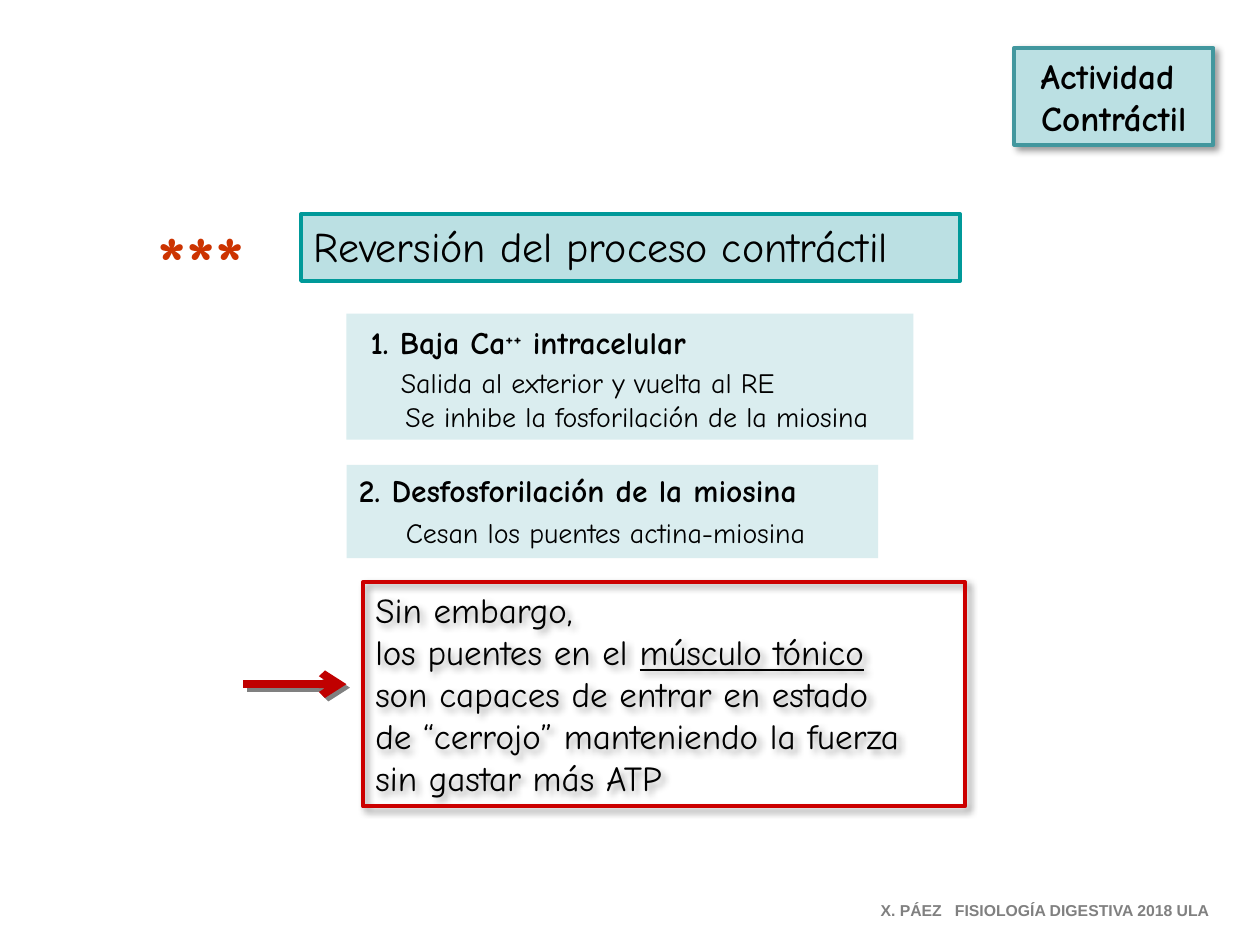
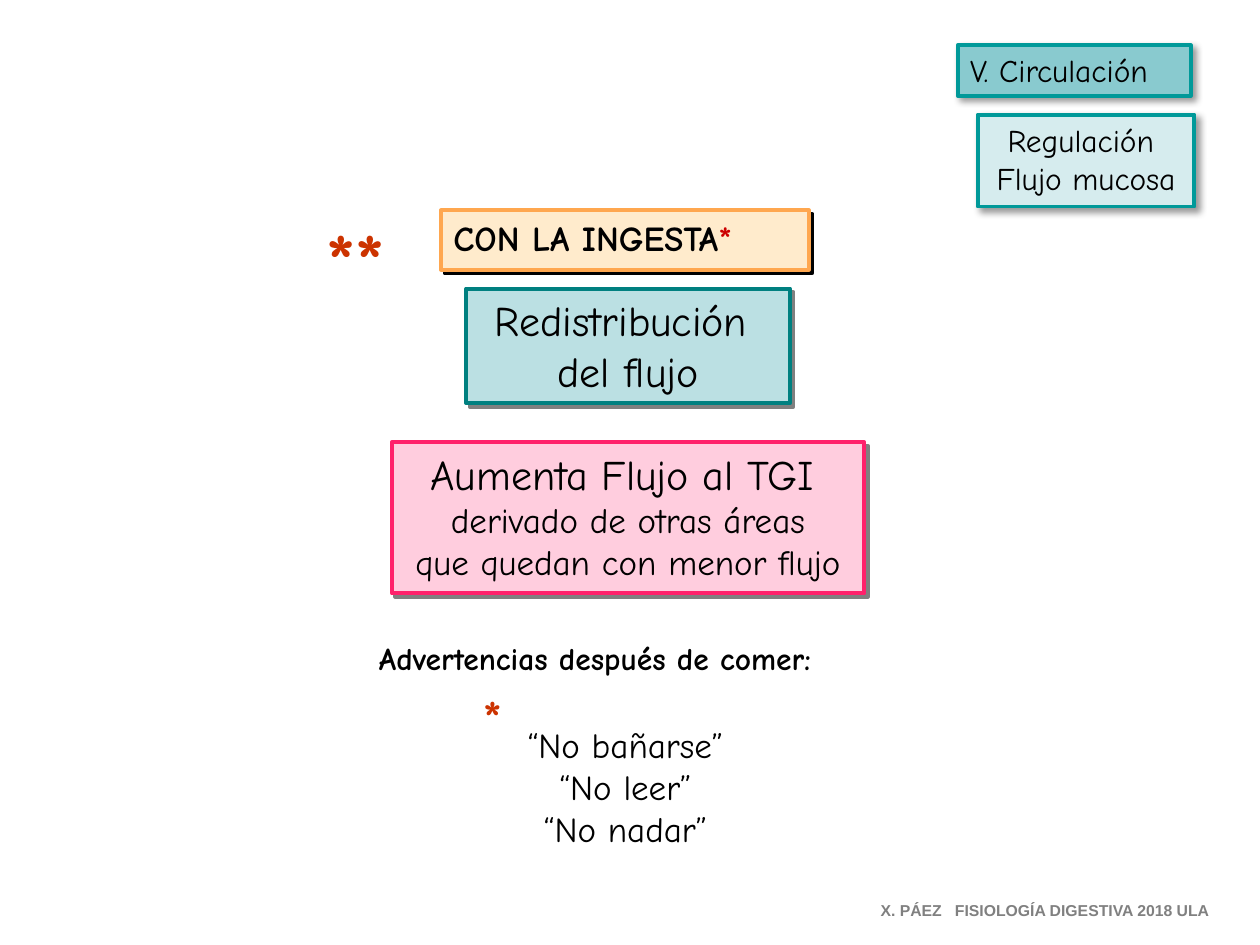
"""Build two digestive physiology slides: contractile reversal and mucosal blood flow."""
from dataclasses import dataclass, field
from typing import Optional

from lxml.etree import SubElement
from pptx import Presentation
from pptx.dml.color import RGBColor
from pptx.enum.shapes import MSO_CONNECTOR, MSO_SHAPE
from pptx.enum.text import MSO_ANCHOR, MSO_AUTO_SIZE, PP_ALIGN
from pptx.oxml import parse_xml
from pptx.oxml.ns import nsdecls, qn
from pptx.util import Inches, Pt

COLUMN = ROW = Inches(0.1)
COLUMNS, ROWS = 100, 75

BLACK = RGBColor(0x00, 0x00, 0x00)
GRAY = RGBColor(0x80, 0x80, 0x80)
RED = RGBColor(0xCC, 0x00, 0x00)
ARROW_RED = RGBColor(0xC0, 0x00, 0x00)
STAR_RED = RGBColor(0xCC, 0x33, 0x00)
TEAL = RGBColor(0x00, 0x99, 0x99)
DARK_TEAL = RGBColor(0x00, 0x80, 0x80)
DULL_TEAL = RGBColor(0x42, 0x97, 0x9E)
AQUA = RGBColor(0xBB, 0xE0, 0xE3)
DEEP_AQUA = RGBColor(0x89, 0xCA, 0xCF)
PALE_AQUA = RGBColor(0xDA, 0xED, 0xEF)
ICE = RGBColor(0xD6, 0xEC, 0xEE)
CREAM = RGBColor(0xFF, 0xEB, 0xCC)
ORANGE = RGBColor(0xFF, 0xA7, 0x4F)
PINK = RGBColor(0xFF, 0xCD, 0xDE)
MAGENTA = RGBColor(0xFF, 0x21, 0x6B)

BODY_FONT = "Comic Neue"
FOOTER_FONT = "Arial"
LEFT, CENTER = PP_ALIGN.LEFT, PP_ALIGN.CENTER


@dataclass(frozen=True)
class Shadow:
    """A drop shadow towards the lower right, in points and percent."""
    color: RGBColor
    opacity: int = 100
    blur: float = 0
    distance: float = 2.8


SOFT = Shadow(BLACK, 40, 4, 3)
HARD_GRAY = Shadow(GRAY)
HARD_BLACK = Shadow(BLACK)


@dataclass(frozen=True)
class Words:
    """A stretch of text with one format."""
    text: str
    style: dict = field(default_factory=dict)


@dataclass(frozen=True)
class Line:
    """A paragraph: its words, and its indent in columns."""
    words: list[Words]
    indent: float = 0
    tab: Optional[float] = None


@dataclass(frozen=True)
class Panel:
    """A text block placed by column, row, columns wide and rows high."""
    place: tuple[float, float, float, float]
    lines: list[Line]
    fill: Optional[RGBColor] = None
    border: Optional[RGBColor] = None
    shadow: Optional[Shadow] = None
    align: PP_ALIGN = LEFT
    wrap: bool = False


def line(text: str, indent: float = 0, tab: Optional[float] = None, **style) -> Line:
    """Make a paragraph with a single format."""
    return Line([Words(text, style)], indent, tab)


def effect_list(shadow: Optional[Shadow]):
    """Make the effect list for a shadow, empty when there is none."""
    effects = parse_xml(f"<a:effectLst {nsdecls('a')}/>")
    if shadow:
        outer = SubElement(effects, qn("a:outerShdw"), blurRad=str(Pt(shadow.blur)),
                           dist=str(Pt(shadow.distance)), dir="2700000",
                           algn="tl", rotWithShape="0")
        tint = SubElement(outer, qn("a:srgbClr"), val=str(shadow.color))
        SubElement(tint, qn("a:alpha"), val=str(shadow.opacity * 1000))
    return effects


def write(paragraph, text: str, *, size: float = 20, color: RGBColor = BLACK,
          bold: bool = False, underline: bool = False, raised: bool = False,
          font: str = BODY_FONT, shadow: Optional[Shadow] = None) -> None:
    """Add formatted text to a paragraph."""
    run = paragraph.add_run()
    run.text = text
    run.font.size, run.font.bold, run.font.underline = Pt(size), bold, underline
    run.font.color.rgb = color
    run.font.name = font
    properties = run.font._element
    if raised:
        properties.set("baseline", "30000")
    if shadow:
        properties.find(qn("a:solidFill")).addnext(effect_list(shadow))


def draw_panel(slide, panel: Panel) -> None:
    """Draw a panel, as a rectangle when it has a fill or a border."""
    left, top, width, height = panel.place
    box = (int(left * COLUMN), int(top * ROW), int(width * COLUMN), int(height * ROW))
    if panel.fill or panel.border:
        block = slide.shapes.add_shape(MSO_SHAPE.RECTANGLE, *box)
        block.shadow.inherit = False
        if panel.fill:
            block.fill.solid()
            block.fill.fore_color.rgb = panel.fill
        else:
            block.fill.background()
        if panel.border:
            block.line.color.rgb = panel.border
            block.line.width = Pt(2.25)
        else:
            block.line.fill.background()
        if panel.shadow:
            effects = block._element.spPr.find(qn("a:effectLst"))
            effects.getparent().replace(effects, effect_list(panel.shadow))
    else:
        block = slide.shapes.add_textbox(*box)
    frame = block.text_frame
    frame.word_wrap = panel.wrap
    frame.auto_size = MSO_AUTO_SIZE.SHAPE_TO_FIT_TEXT
    frame.vertical_anchor = MSO_ANCHOR.TOP
    for index, entry in enumerate(panel.lines):
        paragraph = frame.add_paragraph() if index else frame.paragraphs[0]
        paragraph.alignment = panel.align
        properties = paragraph._p.get_or_add_pPr()
        if entry.indent:
            properties.set("marL", str(int(entry.indent * COLUMN)))
            properties.set("indent", "0")
        if entry.tab:
            stops = SubElement(properties, qn("a:tabLst"))
            SubElement(stops, qn("a:tab"), pos=str(int(entry.tab * COLUMN)), algn="l")
        for words in entry.words:
            write(paragraph, words.text, **words.style)


def draw_arrow(slide, start: float, end: float, row: float) -> None:
    """Draw a thick horizontal arrow between two columns."""
    y = int(row * ROW)
    arrow = slide.shapes.add_connector(MSO_CONNECTOR.STRAIGHT, int(start * COLUMN), y,
                                       int(end * COLUMN), y)
    arrow.line.color.rgb = ARROW_RED
    arrow.line.width = Pt(4.5)
    SubElement(arrow.line._get_or_add_ln(), qn("a:tailEnd"), type="arrow")
    arrow._element.spPr.append(effect_list(HARD_GRAY))


def stars(count: int, place: tuple[float, float, float, float], size: int = 44) -> Panel:
    """Make a mark of red shadowed asterisks."""
    return Panel(place, [line("*" * count, size=size, color=STAR_RED, bold=True,
                              shadow=HARD_BLACK)])


HEADING = {"size": 18, "bold": True}
DETAIL = {"size": 16}

FOOTER = Panel((68.9, 71, 29.2, 2.5),
               [line("X. PÁEZ\tFISIOLOGÍA DIGESTIVA 2018 ULA", tab=5.9, size=9,
                     color=GRAY, bold=True, font=FOOTER_FONT)])

REVERSAL = [
    Panel((23.9, 17, 52.3, 5.3), [line("Reversión del proceso contráctil", size=24)],
          AQUA, TEAL),
    Panel((27.5, 24.9, 45, 10), [
        Line([Words(" "), Words("1. Baja Ca", HEADING),
              Words("++", {**HEADING, "raised": True}), Words(" intracelular", HEADING)]),
        Line([Words(" ", {"size": 18}), Words("Salida al exterior y vuelta al RE", DETAIL)],
             indent=2.5),
        line("Se inhibe la fosforilación de la miosina", indent=3.7, **DETAIL),
    ], PALE_AQUA),
    Panel((27.5, 36.9, 42.2, 7.4), [
        line("2. Desfosforilación de la miosina", **HEADING),
        Line([Words(" "), Words("Cesan los puentes actina-miosina", DETAIL)], indent=2.8),
    ], PALE_AQUA),
    Panel((28.8, 46.2, 47.8, 17.8), [
        line("Sin embargo,"),
        Line([Words("los puentes en el "), Words("músculo tónico", {"underline": True})]),
        line("son capaces de entrar en estado"),
        line("de “cerrojo” manteniendo la fuerza"),
        line("sin gastar más ATP"),
    ], border=RED, shadow=SOFT),
    stars(3, (11.5, 16.5, 11.8, 8.4)),
    Panel((80.5, 3.8, 15.8, 7.7),
          [line("Actividad ", bold=True), line("Contráctil", bold=True)],
          AQUA, DULL_TEAL, SOFT, CENTER),
]

CIRCULATION = [
    Panel((31.1, 35.1, 37.5, 12), [
        Line([Words("Aumenta Flujo al TGI", {"size": 24}), Words(" ")]),
        line("derivado de otras áreas"),
        line("que quedan con menor flujo"),
    ], PINK, MAGENTA, HARD_GRAY, CENTER),
    stars(1, (37.4, 54, 4.1, 5.7), 28),
    Panel((39, 56.9, 21.3, 11), [line("“No bañarse” “No leer”"), line("“No nadar”")],
          align=CENTER, wrap=True),
    Panel((35, 16.7, 29.2, 4.7), [
        Line([Words("CON LA INGESTA", {"bold": True}),
              Words("*", {"bold": True, "color": RED})]),
    ], CREAM, ORANGE, HARD_BLACK),
    Panel((29.1, 50.2, 42.6, 4), [line("Advertencias después de comer:", **HEADING)],
          wrap=True),
    stars(2, (24.9, 16.3, 8.5, 8.4)),
    Panel((37, 22.9, 25.7, 9.1),
          [line("Redistribución ", size=24), line("del flujo", size=24)],
          AQUA, DARK_TEAL, HARD_GRAY, CENTER),
    Panel((76, 3.6, 18.5, 4), [line("V. Circulación", size=18)], DEEP_AQUA, TEAL, SOFT),
    Panel((77.6, 9.1, 17.2, 7.3),
          [line("Regulación ", size=18), line("Flujo mucosa", size=18)],
          ICE, TEAL, SOFT, CENTER),
]


def main() -> None:
    """Build and save the presentation."""
    deck = Presentation()
    deck.slide_width, deck.slide_height = COLUMNS * COLUMN, ROWS * ROW
    blank = deck.slide_layouts[6]
    reversal, circulation = (deck.slides.add_slide(blank) for _ in range(2))
    for slide, panels in ((reversal, REVERSAL), (circulation, CIRCULATION)):
        for panel in [*panels, FOOTER]:
            draw_panel(slide, panel)
    draw_arrow(reversal, 19.3, 27.5, 54.3)
    deck.save("out.pptx")


if __name__ == "__main__":
    main()
